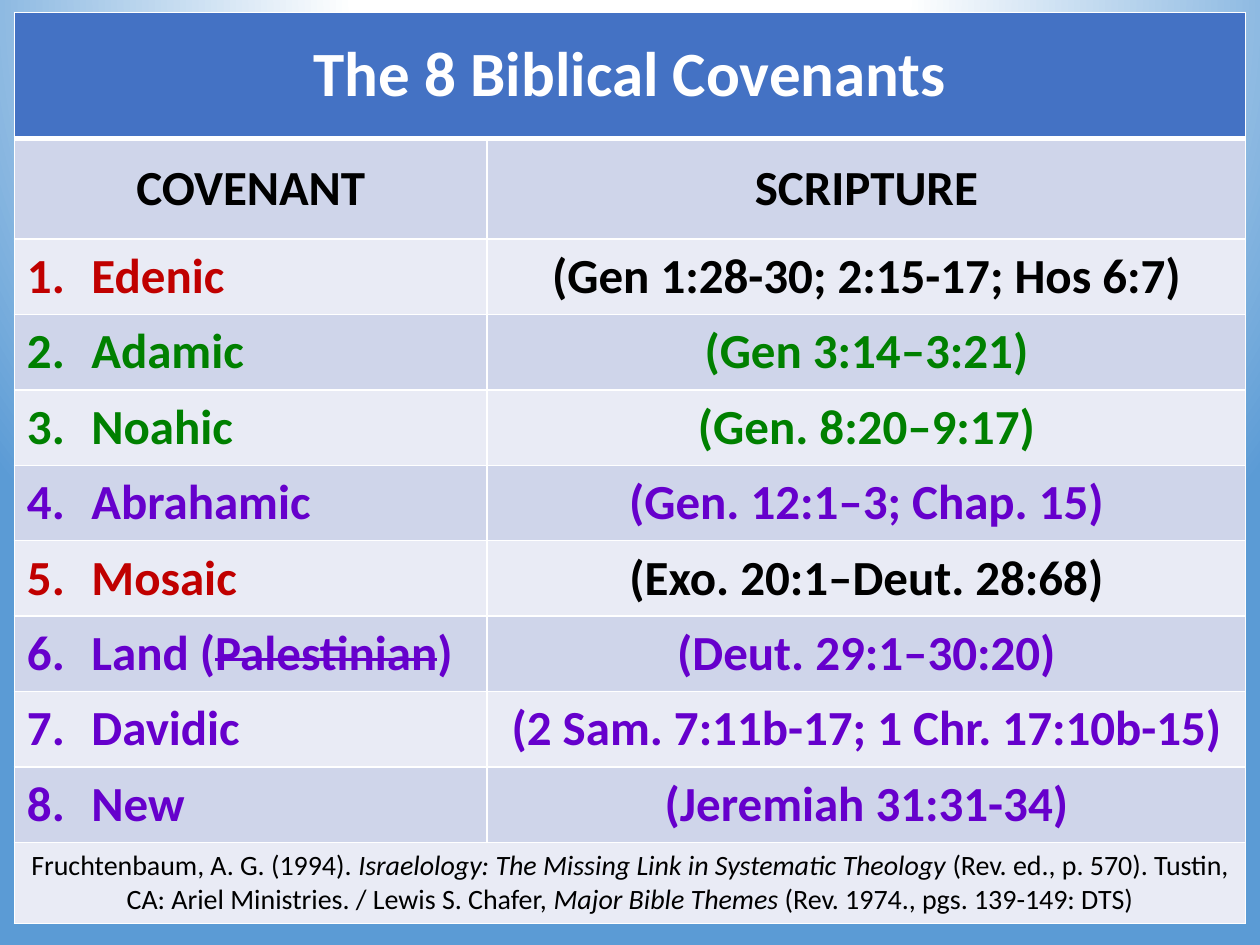
from pptx import Presentation
from pptx.dml.color import RGBColor
from pptx.enum.text import MSO_ANCHOR as Anchor, PP_ALIGN as Align
from pptx.oxml import parse_xml
from pptx.oxml.ns import nsdecls
from pptx.util import Cm, Pt

WHITE = RGBColor(0xFF, 0xFF, 0xFF)
BLACK = RGBColor(0, 0, 0)
BLUE = RGBColor(0x44, 0x72, 0xC4)
BAND_DARK = RGBColor(0xCF, 0xD5, 0xEA)
BAND_LIGHT = RGBColor(0xE9, 0xEB, 0xF5)
RED = RGBColor(0xC0, 0, 0)
GREEN = RGBColor(0, 0x80, 0)
PURPLE = RGBColor(0x66, 0, 0xCC)
INDENT = Cm(1.3)

# Name, scripture, name colour, scripture colour
COVENANTS = [
    ("Edenic", "(Gen 1:28-30; 2:15-17; Hos 6:7)", RED, BLACK),
    ("Adamic", "(Gen 3:14–3:21)", GREEN, GREEN),
    ("Noahic", "(Gen. 8:20–9:17)", GREEN, GREEN),
    ("Abrahamic", "(Gen. 12:1–3; Chap. 15)", PURPLE, PURPLE),
    ("Mosaic", "(Exo. 20:1–Deut. 28:68)", RED, BLACK),
    ("Land (|Palestinian|)", "(Deut. 29:1–30:20)", PURPLE, PURPLE),
    ("Davidic", "(2 Sam. 7:11b-17; 1 Chr. 17:10b-15)", PURPLE, PURPLE),
    ("New", "(Jeremiah 31:31-34)", PURPLE, PURPLE),
]
# Every second part is in italics
SOURCES = [
    "Fruchtenbaum, A. G. (1994). ",
    "Israelology: The Missing Link in Systematic Theology ",
    "(Rev. ed., p. 570). Tustin, CA: Ariel Ministries. / Lewis S. Chafer, ",
    "Major Bible Themes ",
    "(Rev. 1974., pgs. 139-149: DTS)",
]


def style_cell(cell, fill, widths):
    """Give the cell its borders (left, right, top, bottom), fill and anchor."""
    properties = cell._tc.get_or_add_tcPr()
    for side, width in zip("LRTB", widths):
        properties.append(parse_xml(
            f'<a:ln{side} {nsdecls("a")} w="{Pt(width)}"><a:solidFill>'
            f'<a:srgbClr val="{WHITE}"/></a:solidFill></a:ln{side}>'))
    cell.fill.solid()
    cell.fill.fore_color.rgb = fill
    cell.vertical_anchor = Anchor.MIDDLE


def write_cell(cell, parts, color, size=28, bold=True, align=Align.CENTER, number=None):
    """Write the parts as runs of one paragraph, numbered if asked."""
    paragraph = cell.text_frame.paragraphs[0]
    paragraph.alignment = align
    if number:
        paragraph.space_after = Pt(12)
        properties = paragraph._p.get_or_add_pPr()
        properties.set("marL", str(INDENT))
        properties.set("indent", str(-INDENT))
        properties.append(parse_xml(
            f'<a:buFont {nsdecls("a")} typeface="+mj-lt"/>'))
        properties.append(parse_xml(
            f'<a:buAutoNum {nsdecls("a")} type="arabicPeriod" startAt="{number}"/>'))
    runs = []
    for part in parts:
        run = paragraph.add_run()
        run.text = part
        runs.append(run)
        # Runs carry the font, since table cells ignore paragraph defaults
        run.font.name = "Calibri"
        run.font.size = Pt(size)
        run.font.bold = bold
        run.font.color.rgb = color
    return runs


presentation = Presentation()
presentation.slide_width = Cm(25.4)
presentation.slide_height = Cm(19.05)
slide = presentation.slides.add_slide(presentation.slide_layouts[6])

# Background: white glow from above the slide
stops = "".join(
    f'<a:gs pos="{position * 1000}"><a:srgbClr val="{color}"/></a:gs>'
    for position, color in [(0, WHITE), (35, WHITE), (100, "5B9BD5")])
slide.element.cSld.insert(0, parse_xml(
    f'<p:bg {nsdecls("p", "a")}><p:bgPr><a:gradFill><a:gsLst>{stops}</a:gsLst>'
    '<a:path path="circle"><a:fillToRect l="50000" t="-80000" r="50000" b="180000"/>'
    '</a:path></a:gradFill><a:effectLst/></p:bgPr></p:bg>'))

# Table grid
row_heights = [2.54, 2.03] + [1.52] * 8 + [1.63]
last = len(row_heights) - 1
table = slide.shapes.add_table(
    len(row_heights), 2, Cm(0.29), Cm(0.25), Cm(24.82), Cm(sum(row_heights))).table
table.columns[0].width = Cm(9.53)
table.columns[1].width = Cm(15.29)
for index, height in enumerate(row_heights):
    table.rows[index].height = Cm(height)
    fill = BLUE if index == 0 else BAND_DARK if index % 2 else BAND_LIGHT
    top = 3 if index == 1 else 1
    bottom = 3 if index == 0 else 1
    for cell in table.rows[index].cells:
        style_cell(cell, fill, (1, 1, top, bottom))
for index in (0, last):
    table.cell(index, 0).merge(table.cell(index, 1))

# Title and column headings
write_cell(table.cell(0, 0), ["The 8 Biblical Covenants"], WHITE, size=36)
for column, heading in enumerate(["COVENANT", "SCRIPTURE"]):
    write_cell(table.cell(1, column), [heading], BLACK)

# Covenants, with the part between bars struck through
for number, (name, scripture, name_color, scripture_color) in enumerate(COVENANTS, 1):
    row = number + 1
    runs = write_cell(table.cell(row, 0), name.split("|"), name_color,
                      align=Align.LEFT, number=number)
    for run in runs[1::2]:
        run.font._element.set("strike", "sngStrike")
    write_cell(table.cell(row, 1), [scripture], scripture_color)

# Sources
source_cell = table.cell(last, 0)
for run in write_cell(source_cell, SOURCES, BLACK, size=16, bold=False)[1::2]:
    run.font.italic = True
source_cell.text_frame.paragraphs[0].space_after = Pt(12)

presentation.save("out.pptx")
